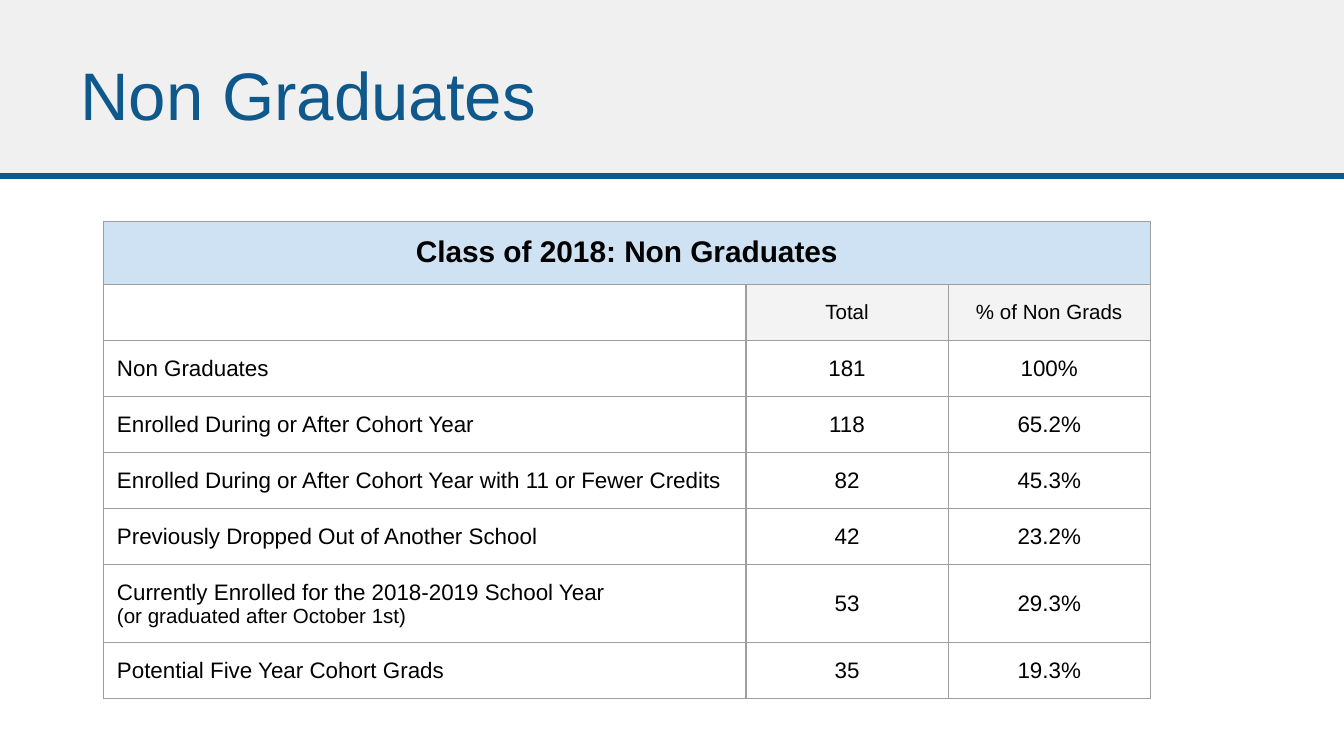
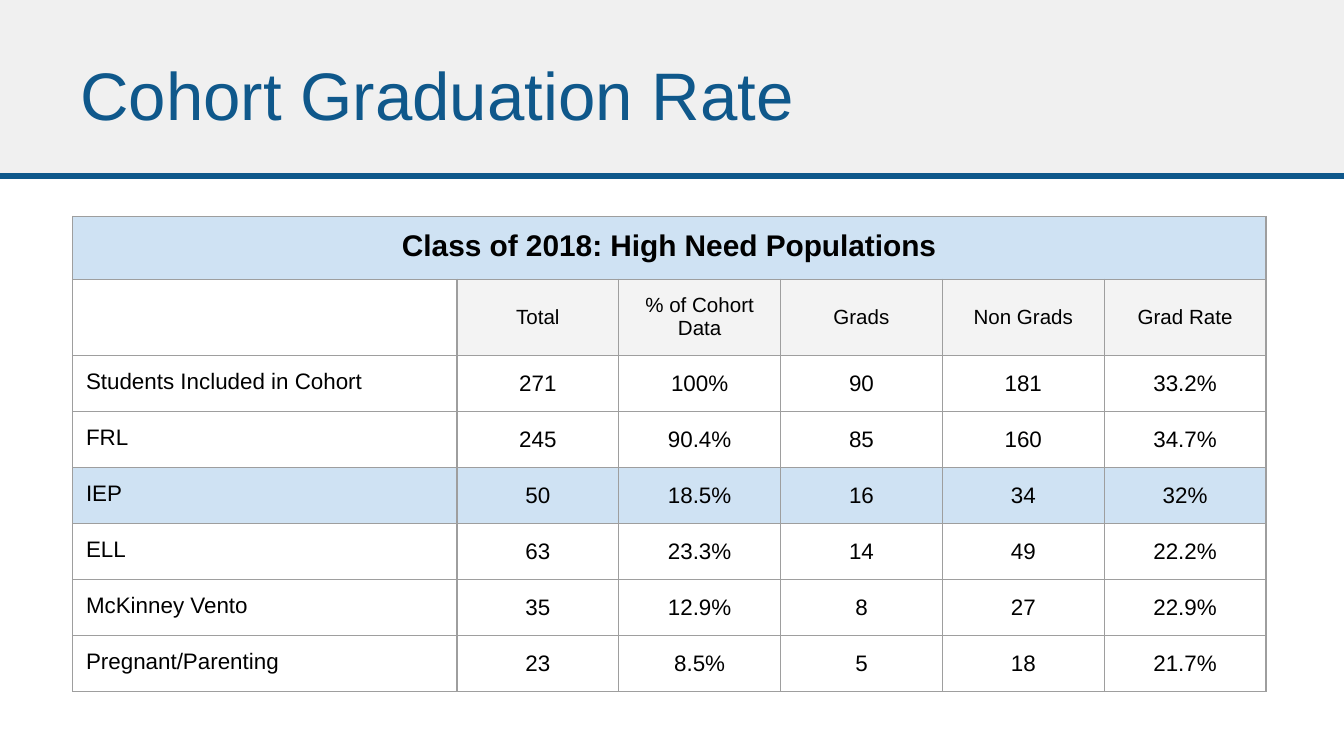
from lxml import etree
from pptx import Presentation
from pptx.dml.color import RGBColor
from pptx.enum.shapes import MSO_CONNECTOR, MSO_SHAPE
from pptx.enum.text import MSO_ANCHOR, PP_ALIGN
from pptx.oxml.ns import qn
from pptx.util import Inches, Pt

RECTANGLE, STRAIGHT = MSO_SHAPE.RECTANGLE, MSO_CONNECTOR.STRAIGHT
TOP, MIDDLE = MSO_ANCHOR.TOP, MSO_ANCHOR.MIDDLE
LEFT, CENTER = PP_ALIGN.LEFT, PP_ALIGN.CENTER

NAVY = RGBColor(0x0F, 0x58, 0x8B)
BAND_GRAY = RGBColor(0xF0, 0xF0, 0xF0)
HEADER_GRAY = RGBColor(0xF3, 0xF3, 0xF3)
PALE_BLUE = RGBColor(0xCF, 0xE2, 0xF3)
BORDER_GRAY = RGBColor(0x9E, 0x9E, 0x9E)
BLACK = RGBColor(0, 0, 0)

FONT = "Arial"
PAGE_WIDTH = 10
PAGE_HEIGHT = PAGE_WIDTH * 9 / 16
BAND_HEIGHT = 1.31
ROW_HEIGHT = Pt(30)
INSET = Inches(0.1)

PAGES = [
    {
        "title": "Non Graduates",
        "caption": "Class of 2018: Non Graduates",
        "place": (0.77, 1.65, 7.79, 3.55),
        "label_width": 4.78,
        "label_anchor": MIDDLE,
        "highlight": None,
        "headers": ["Total", "% of Non Grads"],
        "rows": [
            ("Non Graduates", "181", "100%"),
            ("Enrolled During or After Cohort Year", "118", "65.2%"),
            ("Enrolled During or After Cohort Year with 11 or Fewer Credits", "82", "45.3%"),
            ("Previously Dropped Out of Another School", "42", "23.2%"),
            ("Currently Enrolled for the 2018-2019 School Year \n(or graduated after October 1st)",
             "53", "29.3%"),
            ("Potential Five Year Cohort Grads", "35", "19.3%"),
        ],
    },
    {
        "title": "Cohort Graduation Rate",
        "caption": "Class of 2018: High Need Populations",
        "place": (0.54, 1.61, 8.88, 3.53),
        "label_width": 2.86,
        "label_anchor": TOP,
        "highlight": "IEP",
        "headers": ["Total", "% of Cohort Data", "Grads", "Non Grads", "Grad Rate"],
        "rows": [
            ("Students Included in Cohort", "271", "100%", "90", "181", "33.2%"),
            ("FRL", "245", "90.4%", "85", "160", "34.7%"),
            ("IEP", "50", "18.5%", "16", "34", "32%"),
            ("ELL", "63", "23.3%", "14", "49", "22.2%"),
            ("McKinney Vento", "35", "12.9%", "8", "27", "22.9%"),
            ("Pregnant/Parenting", "23", "8.5%", "5", "18", "21.7%"),
        ],
    },
]


def style_font(font, size, color=BLACK, bold=False):
    font.name = FONT
    font.size = Pt(size)
    font.color.rgb = color
    font.bold = bold


def add_title_band(page, title):
    band = page.shapes.add_shape(RECTANGLE, 0, 0, Inches(PAGE_WIDTH), Inches(BAND_HEIGHT))
    band.shadow.inherit = False
    band.fill.solid()
    band.fill.fore_color.rgb = BAND_GRAY
    band.line.fill.background()

    rule = page.shapes.add_connector(
        STRAIGHT, 0, Inches(BAND_HEIGHT), Inches(PAGE_WIDTH), Inches(BAND_HEIGHT))
    rule.line.color.rgb = NAVY
    rule.line.width = Pt(3)
    etree.SubElement(rule._element.spPr, qn("a:effectLst"))

    box = page.shapes.add_textbox(Inches(0.5), Inches(0.23), Inches(7.67), Inches(0.94))
    frame = box.text_frame
    frame.word_wrap = True
    frame.vertical_anchor = MIDDLE
    frame.margin_left = frame.margin_right = INSET
    frame.margin_top = frame.margin_bottom = INSET
    para = frame.paragraphs[0]
    para.text = title
    style_font(para.font, 36, NAVY)


def add_borders(cell):
    properties = cell._tc.get_or_add_tcPr()
    for index, side in enumerate(("lnL", "lnR", "lnT", "lnB")):
        line = etree.Element(qn(f"a:{side}"), w=str(Pt(0.75)))
        fill = etree.SubElement(line, qn("a:solidFill"))
        etree.SubElement(fill, qn("a:srgbClr"), val=str(BORDER_GRAY))
        properties.insert(index, line)


def paint_cell(cell, color=None):
    if color is None:
        cell.fill.background()
    else:
        cell.fill.solid()
        cell.fill.fore_color.rgb = color
    add_borders(cell)


def write_cell(cell, text, size, align=CENTER, anchor=MIDDLE, bold=False):
    cell.margin_left = cell.margin_right = INSET
    cell.margin_top = cell.margin_bottom = INSET
    cell.vertical_anchor = anchor
    para = cell.text_frame.paragraphs[0]
    para.alignment = align
    para.line_spacing = 1.0
    main, _, note = text.partition("\n")
    para.add_run().text = main
    if note:
        para.add_line_break()
        span = para.add_run()
        span.text = note
        span.font.size = Pt(11)
    style_font(para.font, size, bold=bold)


def add_cohort_table(page, content):
    left, top, width, height = content["place"]
    value_count = len(content["headers"])
    value_width = (width - content["label_width"]) / value_count
    widths = [content["label_width"]] + [value_width] * value_count
    holder = page.shapes.add_table(
        len(content["rows"]) + 2, len(widths),
        Inches(left), Inches(top), Inches(width), Inches(height))
    table = holder.table
    table.first_row = False
    table.horz_banding = False
    for column, column_width in zip(table.columns, widths):
        column.width = Inches(column_width)
    for row in table.rows:
        row.height = ROW_HEIGHT
    holder.height = Inches(height)

    for column in range(len(widths)):
        paint_cell(table.cell(0, column), PALE_BLUE)
        paint_cell(table.cell(1, column), HEADER_GRAY if column else None)
    table.cell(0, 0).merge(table.cell(0, value_count))
    write_cell(table.cell(0, 0), content["caption"], 16, anchor=TOP, bold=True)
    for column, header in enumerate(content["headers"], 1):
        write_cell(table.cell(1, column), header, 11)

    for row, values in enumerate(content["rows"], 2):
        color = PALE_BLUE if values[0] == content["highlight"] else None
        for column, value in enumerate(values):
            cell = table.cell(row, column)
            paint_cell(cell, color)
            if column:
                write_cell(cell, value, 12)
            else:
                write_cell(cell, value, 12, LEFT, content["label_anchor"])


def main():
    deck = Presentation()
    deck.slide_width = Inches(PAGE_WIDTH)
    deck.slide_height = Inches(PAGE_HEIGHT)
    for content in PAGES:
        page = deck.slides.add_slide(deck.slide_layouts[6])
        add_title_band(page, content["title"])
        add_cohort_table(page, content)
    deck.save("out.pptx")


if __name__ == "__main__":
    main()
